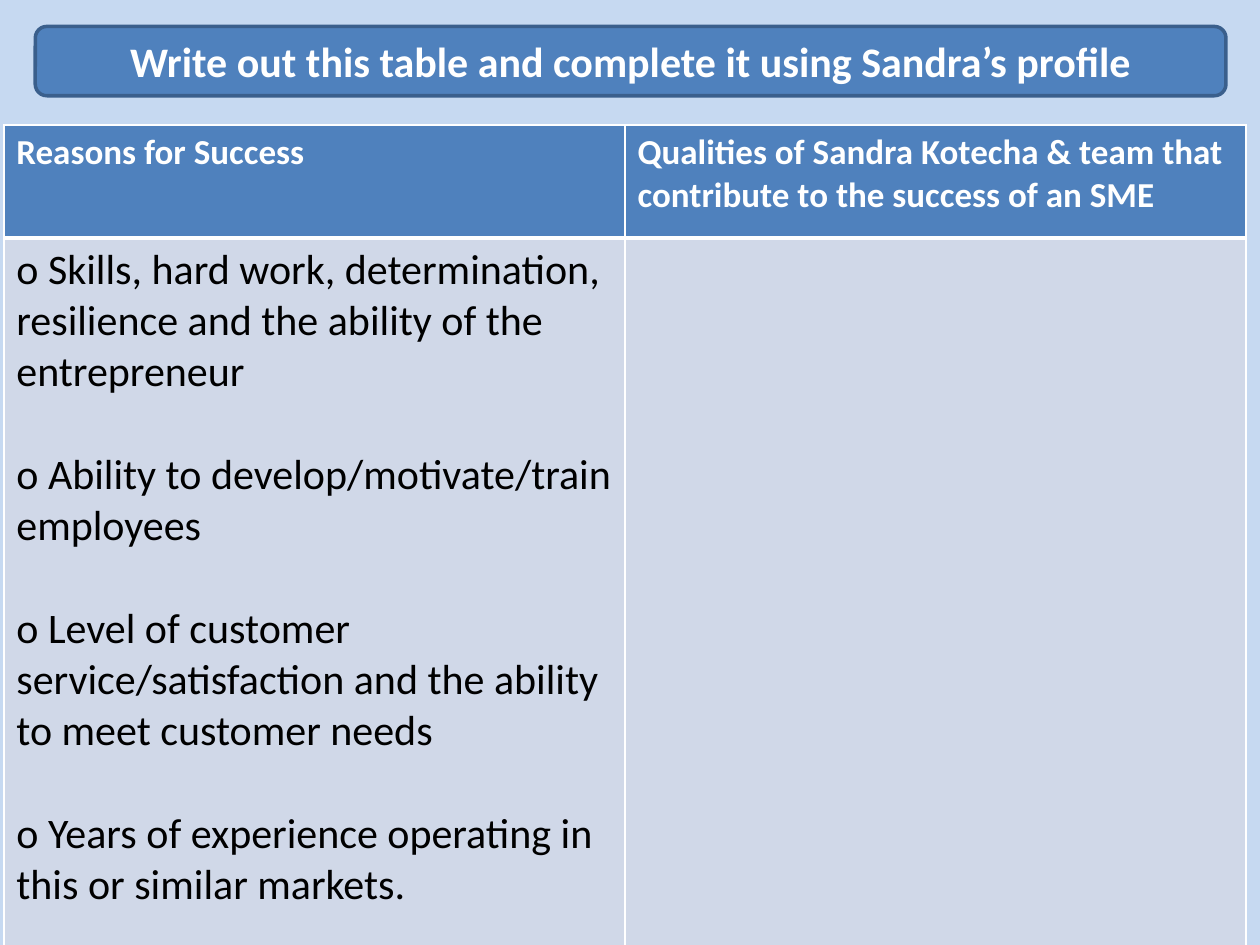
from lxml import etree
from pptx import Presentation
from pptx.dml.color import RGBColor
from pptx.enum.shapes import MSO_SHAPE
from pptx.enum.text import MSO_ANCHOR, PP_ALIGN
from pptx.oxml.ns import qn
from pptx.util import Inches, Pt

ROUND = MSO_SHAPE.ROUNDED_RECTANGLE
MIDDLE = MSO_ANCHOR.MIDDLE
CENTER = PP_ALIGN.CENTER
FONT = "Calibri"
TITLE_ONLY = 5

COLORS = {
    "back": "C6D9F1",
    "blue": "4F81BD",
    "edge": "3A5F8C",
    "body": "D0D8E8",
    "white": "FFFFFF",
    "black": "000000",
}

TITLE = "Write out this table and complete it using Sandra’s profile"
HEADS = [
    "Reasons for Success",
    "Qualities of Sandra Kotecha & team that contribute to the success of an SME",
]
REASONS = [
    "o Skills, hard work, determination, resilience and the ability of the entrepreneur",
    "o Ability to develop/motivate/train employees",
    "o Level of customer service/satisfaction and the ability to meet customer needs",
    "o Years of experience operating in this or similar markets.",
]
BAR = [Inches(n) for n in (0.28, 0.21, 9.45, 0.55)]
GRID = [Inches(n) for n in (0.03, 0.99, 9.86, 6.6)]
HEAD_HIGH = Inches(0.9)


def paint(fill, name):
    fill.solid()
    fill.fore_color.rgb = RGBColor.from_string(COLORS[name])


def style(para, size, color, bold):
    font = para.font
    font.name, font.size, font.bold = FONT, Pt(size), bold
    font.color.rgb = RGBColor.from_string(COLORS[color])


def add_title(slide):
    # Rounded bar, placed behind the title
    bar = slide.shapes.add_shape(ROUND, *BAR)
    bar.shadow.inherit = False
    paint(bar.fill, "blue")
    paint(bar.line.fill, "edge")
    bar.line.width = Pt(2)

    title = slide.shapes.title
    title.left, title.top, title.width, title.height = BAR
    bar.element.addnext(title.element)
    frame = title.text_frame
    frame.text = TITLE
    frame.word_wrap = True
    frame.vertical_anchor = MIDDLE
    para = frame.paragraphs[0]
    para.alignment = CENTER
    style(para, 24, "white", True)


def add_edges(cell, top, bottom):
    props = cell._tc.get_or_add_tcPr()
    widths = {"a:lnL": 1, "a:lnR": 1, "a:lnT": top, "a:lnB": bottom}
    # Borders come before the fill in the cell properties
    for spot, (tag, width) in enumerate(widths.items()):
        line = etree.Element(qn(tag), w=str(Pt(width)))
        fill = etree.SubElement(line, qn("a:solidFill"))
        etree.SubElement(fill, qn("a:srgbClr"), val=COLORS["white"])
        props.insert(spot, line)


def fill_cell(cell, lines, fill, size, color, bold, edges):
    paint(cell.fill, fill)
    add_edges(cell, *edges)
    frame = cell.text_frame
    frame.text = "\n".join(lines)
    for num, para in enumerate(frame.paragraphs):
        style(para, size, color, bold)
        if num:
            para.space_before = Pt(29.3)  # one line of body text


def add_grid(slide):
    table = slide.shapes.add_table(2, 2, *GRID).table
    table.rows[0].height = HEAD_HIGH
    table.rows[1].height = GRID[3] - HEAD_HIGH
    for col, head in enumerate(HEADS):
        fill_cell(table.cell(0, col), [head], "blue", 20, "white", True, (1, 3))
    for col, lines in enumerate([REASONS, []]):
        fill_cell(table.cell(1, col), lines, "body", 24, "black", False, (3, 1))


def main():
    deck = Presentation()
    deck.slide_width, deck.slide_height = Inches(10), Inches(7.5)
    slide = deck.slides.add_slide(deck.slide_layouts[TITLE_ONLY])
    paint(slide.background.fill, "back")
    add_title(slide)
    add_grid(slide)
    deck.save("out.pptx")


if __name__ == "__main__":
    main()
